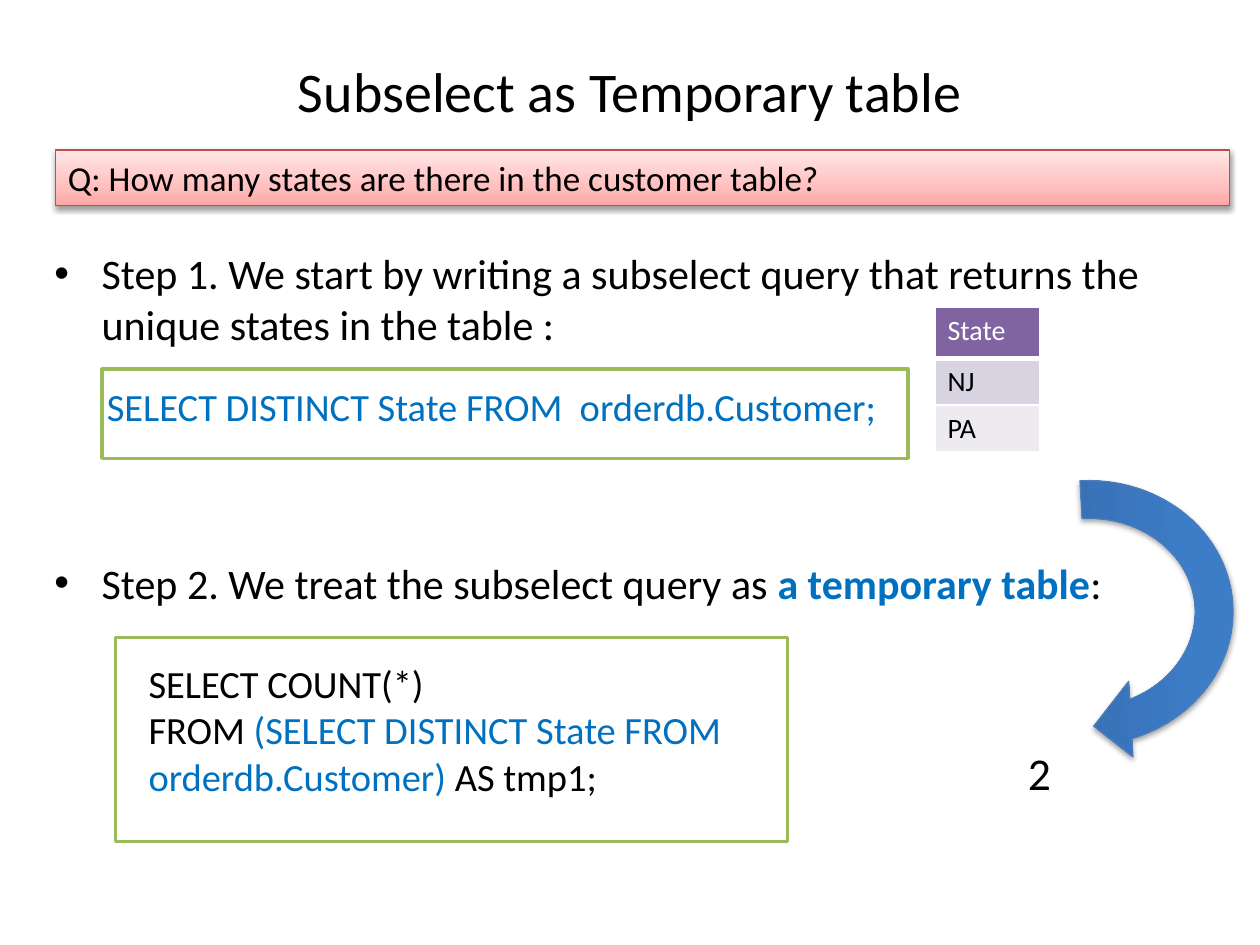
from dataclasses import dataclass

import lxml.etree
import pptx
import pptx.dml.color
import pptx.enum.shapes
import pptx.enum.text
import pptx.oxml.ns
import pptx.util

Pt = pptx.util.Pt
qn = pptx.oxml.ns.qn
Shapes = pptx.enum.shapes.MSO_SHAPE
Align = pptx.enum.text.PP_ALIGN
Anchor = pptx.enum.text.MSO_ANCHOR

BLACK, WHITE, BLUE, GREEN = "000000", "FFFFFF", "0070C0", "9BBB59"


@dataclass(frozen=True)
class Box:
    left: float
    top: float
    width: float
    height: float

    def lengths(self) -> tuple:
        return tuple(Pt(v) for v in (self.left, self.top, self.width, self.height))


@dataclass(frozen=True)
class Span:
    text: str
    color: str = BLACK
    bold: bool = False


@dataclass(frozen=True)
class Glossy:
    kind: int
    box: Box
    stops: tuple
    line: str
    shadow_opacity: int
    shadow_distance: float
    rotation: float = 0


@dataclass(frozen=True)
class Row:
    text: str
    height: float
    fill: str
    color: str = BLACK


def rgb(color: str) -> pptx.dml.color.RGBColor:
    return pptx.dml.color.RGBColor.from_string(color)


def child(parent, tag: str, **attributes):
    return lxml.etree.SubElement(
        parent, qn(tag), {key: str(value) for key, value in attributes.items()})


def write_text(frame, paragraphs: list, *, size: float, align=Align.LEFT,
               anchor=Anchor.TOP, wrap: bool = True, before: float = 0,
               indent: float = 0, bullet: str = "") -> None:
    frame.word_wrap = wrap
    frame.vertical_anchor = anchor
    for index, spans in enumerate(paragraphs):
        paragraph = frame.add_paragraph() if index else frame.paragraphs[0]
        paragraph.alignment = align
        paragraph.space_before = Pt(before)
        if bullet:
            properties = paragraph._p.get_or_add_pPr()
            properties.set("marL", str(Pt(indent)))
            properties.set("indent", str(-Pt(indent)))
            child(properties, "a:buFont", typeface="Arial")
            child(properties, "a:buChar", char=bullet)
        for span in spans:
            run = paragraph.add_run()
            run.text = span.text
            run.font.name = "Calibri"
            run.font.size = Pt(size)
            run.font.bold = span.bold
            run.font.color.rgb = rgb(span.color)


def add_text(slide, box: Box, paragraphs: list, **text_format) -> None:
    write_text(slide.shapes.add_textbox(*box.lengths()).text_frame,
               paragraphs, **text_format)


def add_frame(slide, box: Box) -> None:
    frame = slide.shapes.add_shape(Shapes.RECTANGLE, *box.lengths())
    frame.shadow.inherit = False
    frame.fill.background()
    frame.line.color.rgb = rgb(GREEN)
    frame.line.width = Pt(2)


def add_glossy(slide, look: Glossy):
    shape = slide.shapes.add_shape(look.kind, *look.box.lengths())
    shape.rotation = look.rotation
    shape.fill.gradient()
    shape.fill.gradient_angle = 90
    properties = shape._element.spPr
    stop_list = properties.find(qn("a:gradFill")).find(qn("a:gsLst"))
    for stop in list(stop_list):
        stop_list.remove(stop)
    for percent, color in look.stops:
        stop = child(stop_list, "a:gs", pos=percent * 1000)
        child(stop, "a:srgbClr", val=color)
    shape.line.color.rgb = rgb(look.line)
    shape.line.width = Pt(0.75)
    shape.shadow.inherit = False
    shadow = child(properties.find(qn("a:effectLst")), "a:outerShdw",
                   blurRad=Pt(3.1), dist=Pt(look.shadow_distance),
                   dir=5400000, rotWithShape=0)
    shade = child(shadow, "a:srgbClr", val=BLACK)
    child(shade, "a:alpha", val=look.shadow_opacity * 1000)
    return shape


def add_states(slide, left: float, top: float, width: float, rows: list) -> None:
    box = Box(left, top, width, sum(row.height for row in rows))
    table = slide.shapes.add_table(len(rows), 1, *box.lengths()).table
    for index, row in enumerate(rows):
        table.rows[index].height = Pt(row.height)
        cell = table.cell(index, 0)
        write_text(cell.text_frame, [[Span(row.text, row.color)]], size=16)
        properties = cell._tc.get_or_add_tcPr()
        header_edge = {0: "a:lnB", 1: "a:lnT"}.get(index)
        for side in ("a:lnL", "a:lnR", "a:lnT", "a:lnB"):
            edge = child(properties, side, w=Pt(3 if side == header_edge else 1))
            child(child(edge, "a:solidFill"), "a:srgbClr", val=WHITE)
        cell.fill.solid()
        cell.fill.fore_color.rgb = rgb(row.fill)


def main() -> None:
    deck = pptx.Presentation()
    deck.slide_width, deck.slide_height = Pt(720), Pt(540)
    slide = deck.slides.add_slide(deck.slide_layouts[6])
    step = {"size": 24, "before": 2, "indent": 27, "bullet": "•"}

    add_text(slide, Box(36, 21.6, 648, 60), [[Span("Subselect as Temporary table")]],
             size=32, align=Align.CENTER, anchor=Anchor.MIDDLE)
    add_text(slide, Box(24, 138, 648, 72), [[Span(
        "Step 1. We start by writing a subselect query that returns the "
        "unique states in the table :")]], **step)

    add_glossy(slide, Glossy(
        Shapes.CIRCULAR_ARROW, Box(535, 256.3, 172.8, 188),
        ((0, "2F5F99"), (80, "3D7CC7"), (100, "3A7CCB")), "4B7EBC", 35, 1.8, 86.8))
    add_states(slide, 534.3, 175.7, 59.8, [
        Row("State", 29.2, "8064A2", WHITE),
        Row("NJ", 26.6, "D8D3E0"),
        Row("PA", 26.6, "EDEAF0")])
    add_text(slide, Box(580.3, 422, 28, 39), [[Span("2")]], size=26, wrap=False)

    add_text(slide, Box(24, 314.8, 636, 40), [[
        Span("Step 2. We treat the subselect query as "),
        Span("a temporary table", BLUE, True),
        Span(":")]], **step)

    question = add_glossy(slide, Glossy(
        Shapes.RECTANGLE, Box(31.7, 85.8, 671, 31.7),
        ((0, "FFA6A5"), (35, "FFC0BF"), (100, "FFE7E7")), "BF4C48", 38, 1.6))
    write_text(question.text_frame,
               [[Span("Q: How many states are there in the customer table?")]], size=20)

    add_text(slide, Box(54, 215.3, 498, 34),
             [[Span("SELECT DISTINCT State FROM  orderdb.Customer;", BLUE)]], size=22)
    add_text(slide, Box(77.8, 373.7, 421, 87), [
        [Span("SELECT COUNT(*)")],
        [Span("FROM "),
         Span("(SELECT DISTINCT State FROM orderdb.Customer) ", BLUE),
         Span("AS tmp1;")]], size=22)
    add_frame(slide, Box(58.4, 210.9, 460.4, 51))
    add_frame(slide, Box(66, 364.3, 384, 116.5))

    deck.save("out.pptx")


if __name__ == "__main__":
    main()
